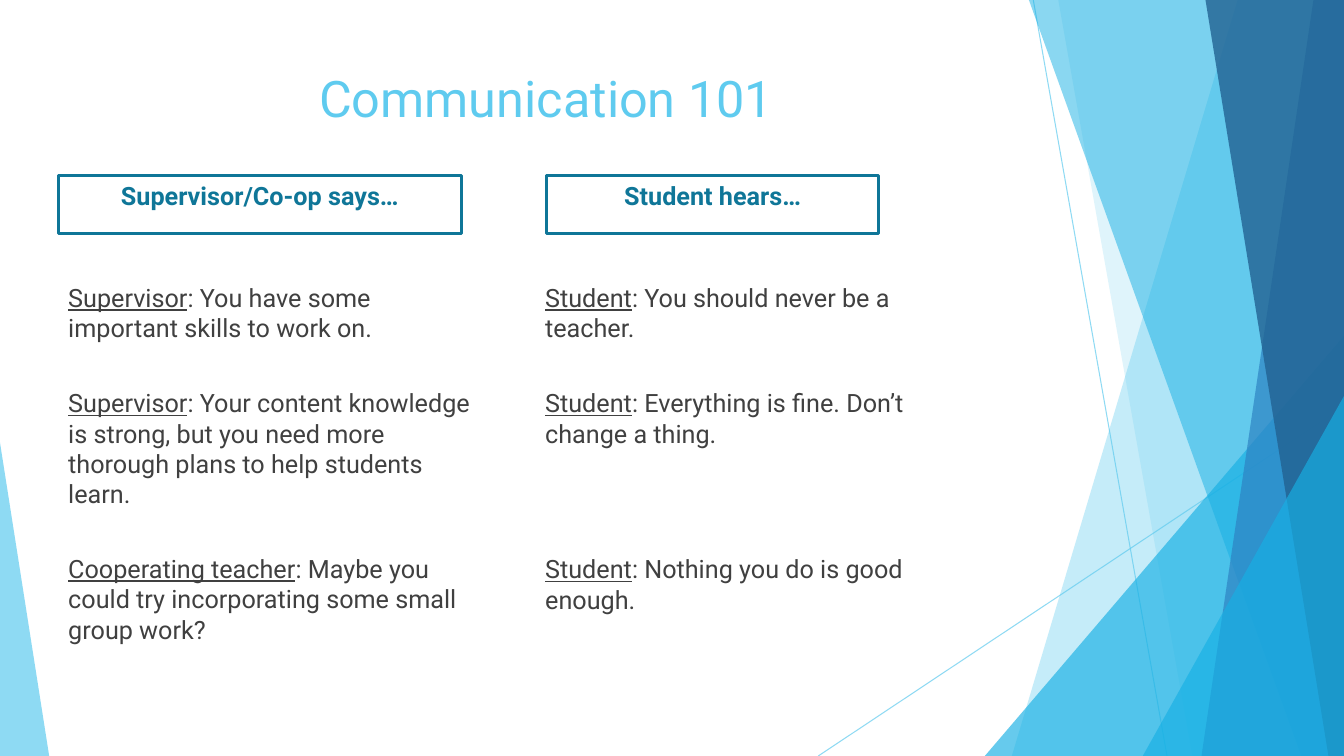
from lxml import etree
from pptx import Presentation
from pptx import util as u
from pptx.dml import color as dml
from pptx.enum import shapes, text
from pptx.oxml import ns

COLORS = {
    "sky": "5FCBEF",
    "cyan": "17B0E4",
    "blue": "2E83C3",
    "navy": "226292",
    "teal": "0F7698",
    "body": "404040",
}
WIDTH, HEIGHT = 33.87, 19.05


def set_alpha(shape, percent):
    fill_color = shape.element.xpath(".//a:srgbClr")[0]
    etree.SubElement(fill_color, ns.qn("a:alpha"), val=str(percent * 1000))


def add_run(paragraph, wording, color, **formats):
    run = paragraph.add_run()
    run.text = wording
    run.font.color.rgb = dml.RGBColor.from_string(COLORS[color])
    for name, value in {"name": "Roboto", **formats}.items():
        setattr(run.font, name, value)


presentation = Presentation()
presentation.slide_width = u.Cm(WIDTH)
presentation.slide_height = u.Cm(HEIGHT)
slide = presentation.slides.add_slide(presentation.slide_layouts[6])

rays = [(26.04, 0, 29.41, HEIGHT), (WIDTH, 10.24, 20.62, HEIGHT)]
for ray in rays:
    connector = slide.shapes.add_connector(
        shapes.MSO_CONNECTOR.STRAIGHT, *[u.Cm(value) for value in ray]
    )
    connector.line.color.rgb = dml.RGBColor.from_string(COLORS["sky"])
    connector.line.width = u.Pt(0.75)
    set_alpha(connector, 70)
    etree.SubElement(connector.element.spPr, ns.qn("a:effectLst"))

facets = [
    ("band", (31.19, 25.5), "sky", 36),
    ("band", (26.67, 30.05), "sky", 20),
    ("triangle", (24.82, 8.46, 9.05, 1), "cyan", 66),
    ("band", (25.93, 32.79), "cyan", 50),
    ("band", (33.1, 30.28), "blue", 70),
    ("band", (30.38, 33.48), "navy", 80),
    ("triangle", (28.8, 9.98, 5.07, 1), "cyan", 66),
    ("triangle", (0, 11.15, 1.24, 0), "sky", 70),
]
for kind, geometry, color, alpha in facets:
    if kind == "band":
        top_x, bottom_x = geometry
        builder = slide.shapes.build_freeform(u.Cm(top_x), 0)
        corners = [(WIDTH, 0), (WIDTH, HEIGHT), (bottom_x, HEIGHT)]
        builder.add_line_segments([(u.Cm(x), u.Cm(y)) for x, y in corners])
        shape = builder.convert_to_shape()
    else:
        left, top, width, apex = geometry
        shape = slide.shapes.add_shape(
            shapes.MSO_SHAPE.ISOSCELES_TRIANGLE,
            u.Cm(left), u.Cm(top), u.Cm(width), u.Cm(HEIGHT - top),
        )
        shape.adjustments[0] = apex
    shape.shadow.inherit = False
    shape.fill.solid()
    shape.fill.fore_color.rgb = dml.RGBColor.from_string(COLORS[color])
    shape.line.fill.background()
    set_alpha(shape, alpha)

title = slide.shapes.add_textbox(u.Cm(1.83), u.Cm(1.57), u.Cm(23.88), u.Cm(2.31))
title.text_frame.word_wrap = True
paragraph = title.text_frame.paragraphs[0]
paragraph.alignment = text.PP_ALIGN.CENTER
add_run(paragraph, "Communication 101", "sky", size=u.Pt(36))

headings = [
    ("Supervisor/Co-op says…", 1.47, 10.16),
    ("Student hears…", 13.77, 8.38),
]
for wording, left, width in headings:
    box = slide.shapes.add_shape(
        shapes.MSO_SHAPE.RECTANGLE, u.Cm(left), u.Cm(4.42), u.Cm(width), u.Cm(1.47)
    )
    box.shadow.inherit = False
    box.fill.background()
    box.line.color.rgb = dml.RGBColor.from_string(COLORS["teal"])
    box.line.width = u.Pt(2.25)
    box.text_frame.word_wrap = True
    box.text_frame.vertical_anchor = text.MSO_ANCHOR.TOP
    paragraph = box.text_frame.paragraphs[0]
    paragraph.alignment = text.PP_ALIGN.CENTER
    add_run(paragraph, wording, "teal", size=u.Pt(18), bold=True)

columns = [
    (1.47, 11.02, [
        ("Supervisor", "You have some important skills to work on.", 0),
        ("Supervisor", "Your content knowledge is strong, but you need more "
         "thorough plans to help students learn.", 32),
        ("Cooperating teacher", "Maybe you could try incorporating some small "
         "group work?", 32),
    ]),
    (13.49, 10.16, [
        ("Student", "You should never be a teacher.", 0),
        ("Student", "Everything is fine. Don’t change a thing.", 32),
        ("Student", "Nothing you do is good enough.", 75.5),
    ]),
]
for left, width, remarks in columns:
    column = slide.shapes.add_textbox(u.Cm(left), u.Cm(6.99), u.Cm(width), u.Cm(10.97))
    frame = column.text_frame
    frame.word_wrap = True
    for index, (speaker, remark, gap) in enumerate(remarks):
        paragraph = frame.add_paragraph() if index else frame.paragraphs[0]
        paragraph.space_before = u.Pt(gap)
        add_run(paragraph, speaker, "body", size=u.Pt(18), underline=True)
        add_run(paragraph, f": {remark}", "body", size=u.Pt(18))

presentation.save("out.pptx")
